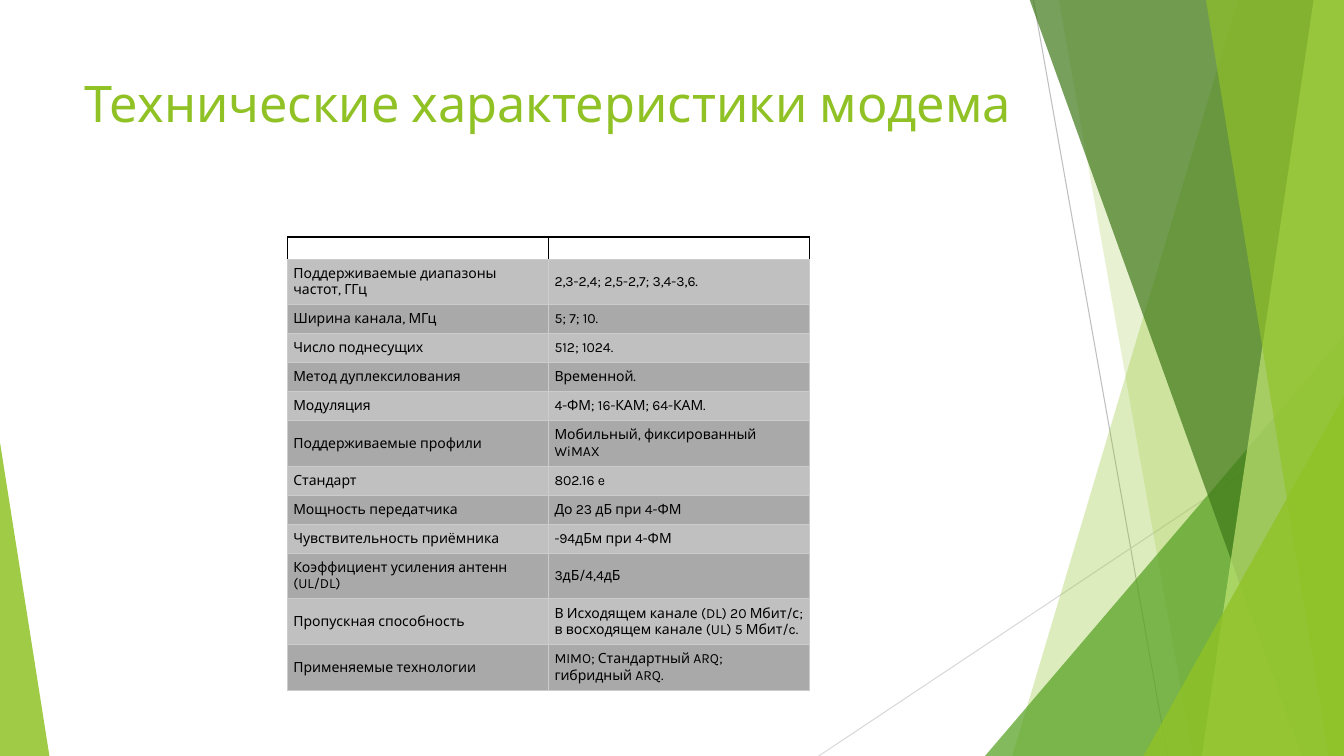
from dataclasses import dataclass

from lxml.etree import SubElement
from pptx import Presentation
from pptx.dml.color import RGBColor
from pptx.enum.shapes import MSO_CONNECTOR, MSO_SHAPE
from pptx.enum.text import MSO_ANCHOR
from pptx.oxml.ns import qn
from pptx.util import Emu, Pt

# Content
TITLE = "Технические характеристики модема"
SPECS = [
    ("Поддерживаемые диапазоны частот, ГГц", "2,3-2,4; 2,5-2,7; 3,4-3,6."),
    ("Ширина канала, МГц", "5; 7; 10."),
    ("Число поднесущих", "512; 1024."),
    ("Метод дуплексилования", "Временной."),
    ("Модуляция", "4-ФМ; 16-КАМ; 64-КАМ."),
    ("Поддерживаемые профили", "Мобильный, фиксированный WiMAX"),
    ("Стандарт", "802.16 e"),
    ("Мощность передатчика", "До 23 дБ при 4-ФМ"),
    ("Чувствительность приёмника", "-94дБм при 4-ФМ"),
    ("Коэффициент усиления антенн (UL/DL)", "3дБ/4,4дБ"),
    ("Пропускная способность",
     "В Исходящем канале (DL) 20 Мбит/с; в восходящем канале (UL) 5 Мбит/c."),
    ("Применяемые технологии", "MIMO; Стандартный ARQ; гибридный ARQ."),
]
TWO_LINE_SPECS = {0, 5, 9, 10, 11}


@dataclass(frozen=True)
class Theme:
    font: str = "Karla"
    title_size: int = 36
    cell_size: int = 10
    lime: str = "90C226"
    pale_lime: str = "C0E474"
    green: str = "54A021"
    dark_green: str = "3F7819"
    black: str = "000000"
    grid: str = "CCCCCC"
    bands: tuple = ("C0C0C0", "A9A9A9")


THEME = Theme()

# Geometry in px, 100 px to the inch
PX = 9144
WIDTH, HEIGHT = 1333, 750
TITLE_BOX = (74, 67, 940, 144)
TABLE_LEFT, TABLE_TOP, COLUMN_WIDTH = 285, 235, 259
HEADER_HEIGHT, ONE_LINE, TWO_LINES = 22, 28, 45
CELL_INSET = 6
RAYS = [((1025, 0), (1158, 750), "BFBFBF"), ((1333, 403), (812, 750), "D9D9D9")]
# Bands reach the right edge: top x, bottom x, colour, opacity %
# Triangles: left, top, width, apex position, colour, opacity %
FACETS = [
    ("band", (1228, 1004), THEME.lime, 30),
    ("band", (1050, 1183), THEME.lime, 20),
    ("triangle", (977, 333, 356, 1), THEME.green, 72),
    ("band", (1021, 1291), THEME.dark_green, 70),
    ("band", (1303, 1192), THEME.pale_lime, 70),
    ("band", (1196, 1318), THEME.lime, 65),
    ("triangle", (1134, 393, 199, 1), THEME.lime, 80),
    ("triangle", (0, 439, 49, 0), THEME.lime, 85),
]


def px(*lengths):
    return [Emu(length * PX) for length in lengths]


def paint(fill, color):
    fill.solid()
    fill.fore_color.rgb = RGBColor.from_string(color)


def add_run(paragraph, text, size, color):
    run = paragraph.add_run()
    run.text = text
    run.font.name = THEME.font
    run.font.size = Pt(size)
    run.font.color.rgb = RGBColor.from_string(color)


def add_ray(shapes, start, end, color):
    ray = shapes.add_connector(MSO_CONNECTOR.STRAIGHT, *px(*start, *end))
    ray.line.color.rgb = RGBColor.from_string(color)
    ray.line.width = Pt(0.75)
    SubElement(ray._element.spPr, qn("a:effectLst"))


def add_facet(shapes, kind, place, color, opacity):
    if kind == "band":
        top_x, bottom_x = place
        outline = shapes.build_freeform(top_x, -1, scale=PX)
        outline.add_line_segments([(WIDTH, -1), (WIDTH, HEIGHT), (bottom_x, HEIGHT)])
        facet = outline.convert_to_shape()
    else:
        left, top, width, apex = place
        facet = shapes.add_shape(MSO_SHAPE.ISOSCELES_TRIANGLE,
                                 *px(left, top, width, HEIGHT - top))
        facet.adjustments[0] = apex
    facet.shadow.inherit = False
    facet.line.fill.background()
    paint(facet.fill, color)
    rgb = facet._element.spPr.find(qn("a:solidFill"))[0]
    SubElement(rgb, qn("a:alpha"), val=str(opacity * 1000))


def set_borders(cell, **borders):
    """Each side is a (colour, points) pair."""
    properties = cell._tc.get_or_add_tcPr()
    for position, side in enumerate("LRTB"):
        color, points = borders.get(side, (THEME.grid, 0.75))
        border = SubElement(properties, qn(f"a:ln{side}"), w=str(Pt(points)))
        SubElement(SubElement(border, qn("a:solidFill")), qn("a:srgbClr"), val=color)
        properties.insert(position, border)


def add_spec_table(shapes):
    heights = [HEADER_HEIGHT] + [
        TWO_LINES if i in TWO_LINE_SPECS else ONE_LINE for i in range(len(SPECS))]
    table = shapes.add_table(len(heights), 2, *px(
        TABLE_LEFT, TABLE_TOP, 2 * COLUMN_WIDTH, sum(heights))).table
    table.first_row = table.horz_banding = False
    for column in table.columns:
        column.width = px(COLUMN_WIDTH)[0]
    for row, height in zip(table.rows, heights):
        row.height = px(height)[0]

    # Empty header row
    for cell in table.rows[0].cells:
        cell.margin_top = cell.margin_bottom = 0
        cell.fill.background()
        SubElement(cell.text_frame.paragraphs[0]._p, qn("a:endParaRPr"),
                   sz=str(THEME.cell_size * 100))
        set_borders(cell, L=(THEME.black, 1), R=(THEME.black, 1), T=(THEME.black, 1.5))

    # Specification rows
    for i, spec in enumerate(SPECS):
        for cell, text in zip(table.rows[i + 1].cells, spec):
            cell.margin_left, cell.margin_right, cell.margin_top, cell.margin_bottom = (
                px(CELL_INSET) * 4)
            cell.vertical_anchor = MSO_ANCHOR.MIDDLE
            paint(cell.fill, THEME.bands[i % 2])
            set_borders(cell)
            add_run(cell.text_frame.paragraphs[0], text, THEME.cell_size, THEME.black)


def main():
    presentation = Presentation()
    presentation.slide_width, presentation.slide_height = px(WIDTH, HEIGHT)
    shapes = presentation.slides.add_slide(presentation.slide_layouts[6]).shapes

    # Backdrop
    for ray in RAYS:
        add_ray(shapes, *ray)
    for facet in FACETS:
        add_facet(shapes, *facet)

    # Title
    title = shapes.add_textbox(*px(*TITLE_BOX)).text_frame
    title.word_wrap = True
    add_run(title.paragraphs[0], TITLE, THEME.title_size, THEME.lime)

    add_spec_table(shapes)
    presentation.save("out.pptx")


if __name__ == "__main__":
    main()
